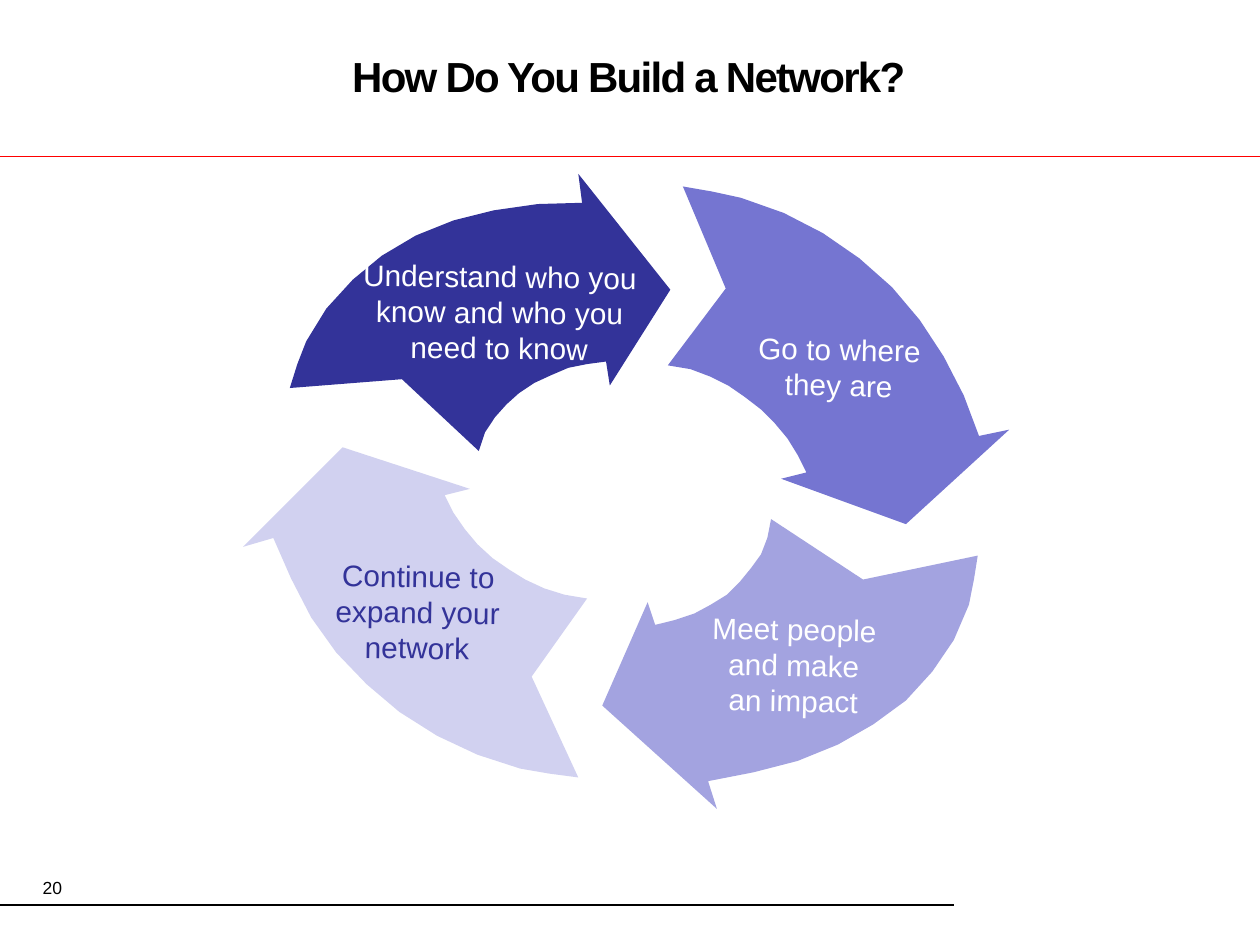
from lxml.etree import SubElement
from pptx import Presentation
from pptx.dml.color import RGBColor
from pptx.enum.shapes import MSO_CONNECTOR as Connector
from pptx.enum.text import MSO_ANCHOR as Anchor, PP_ALIGN as Align
from pptx.oxml.ns import qn
from pptx.util import Inches, Pt

COLUMNS, ROWS = 1000, 750
UNIT = Inches(10) // COLUMNS

BLACK = RGBColor(0x00, 0x00, 0x00)
WHITE = RGBColor(0xFF, 0xFF, 0xFF)
RED = RGBColor(0xFF, 0x00, 0x00)
NAVY = RGBColor(0x33, 0x33, 0x99)
INDIGO = RGBColor(0x75, 0x75, 0xD1)
LAVENDER = RGBColor(0xA3, 0xA3, 0xE0)
PALE = RGBColor(0xD1, 0xD1, 0xF0)

UNDERSTAND_ARROW = [
    (484, 306), (532, 230), (459, 138), (462, 161), (427, 162), (392, 167),
    (360, 175), (330, 187), (303, 203), (280, 222), (259, 245), (243, 271),
    (236, 289), (230, 308), (319, 301), (380, 358), (385, 343), (393, 331),
    (402, 321), (412, 312), (424, 304), (437, 298), (451, 292), (466, 289),
    (481, 287)]
GO_ARROW = [
    (620, 380), (719, 416), (801, 341), (777, 346), (765, 314), (749, 283),
    (730, 254), (708, 228), (682, 205), (653, 185), (622, 169), (588, 157),
    (565, 152), (542, 148), (576, 229), (530, 290), (548, 293), (564, 299),
    (578, 306), (591, 315), (604, 325), (615, 336), (625, 348), (633, 361),
    (640, 375)]
MEET_ARROW = [
    (514, 478), (478, 560), (569, 642), (562, 620), (598, 613), (633, 604),
    (665, 591), (693, 575), (719, 556), (740, 533), (757, 508), (769, 480),
    (773, 460), (776, 441), (685, 460), (612, 412), (609, 427), (604, 440),
    (596, 451), (587, 462), (577, 472), (564, 480), (551, 487), (536, 492),
    (520, 496)]
EXPAND_ARROW = [
    (373, 388), (272, 355), (193, 434), (217, 427), (231, 459), (247, 490),
    (267, 518), (291, 543), (317, 565), (347, 584), (379, 599), (413, 610),
    (436, 614), (459, 617), (422, 537), (466, 475), (448, 472), (432, 467),
    (417, 460), (404, 452), (391, 443), (379, 432), (369, 420), (360, 407),
    (353, 393)]

STEPS = [
    (UNDERSTAND_ARROW, NAVY, WHITE, (276, 200, 241, 96), 0.6,
     ["Understand who you know and who you need to know"]),
    (GO_ARROW, INDIGO, WHITE, (549, 258, 234, 67), 1.3,
     ["Go to where", "they are"]),
    (MEET_ARROW, LAVENDER, WHITE, (469, 480, 322, 96), 1.1,
     ["Meet people", "and make", "an impact"]),
    (EXPAND_ARROW, PALE, NAVY, (188, 438, 287, 96), 1,
     ["Continue to", "expand your", "network"]),
]


def grid(*cells):
    return [cell * UNIT for cell in cells]


def apply(target, formats):
    for name, value in formats.items():
        setattr(target, name, value)


def add_rule(slide, start, end, row, color, weight):
    rule = slide.shapes.add_connector(
        Connector.STRAIGHT, *grid(start, row, end, row))
    rule.line.color.rgb = color
    rule.line.width = Pt(weight)
    SubElement(rule._element.spPr, qn("a:effectLst"))


def add_arrow(slide, outline, color):
    builder = slide.shapes.build_freeform(*outline[0], scale=UNIT)
    builder.add_line_segments(outline[1:], close=True)
    arrow = builder.convert_to_shape()
    arrow.shadow.inherit = False
    arrow.fill.solid()
    arrow.fill.fore_color.rgb = color
    arrow.line.fill.background()


def add_text(slide, cells, lines, size, color, align=Align.CENTER,
             rotation=0, bold=False, frame=None):
    box = slide.shapes.add_textbox(*grid(*cells))
    box.rotation = rotation
    apply(box.text_frame, {"word_wrap": True, **(frame or {})})
    box.text_frame.text = "\n".join(lines)
    for paragraph in box.text_frame.paragraphs:
        paragraph.alignment = align
        font = paragraph.runs[0].font
        apply(font, {"name": "Arial", "size": Pt(size), "bold": bold})
        font.color.rgb = color
    return box


def add_title(slide, words):
    title = add_text(
        slide, (49, 0, 900, 83), [words], 24, BLACK, bold=True,
        frame={"vertical_anchor": Anchor.BOTTOM,
               "margin_bottom": Inches(0.03)})
    heading = title.text_frame.paragraphs[0]
    heading.line_spacing = Pt(26)
    heading.runs[0].font._element.set("spc", "-100")


def main():
    deck = Presentation()
    apply(deck, {"slide_width": COLUMNS * UNIT, "slide_height": ROWS * UNIT})
    slide = deck.slides.add_slide(deck.slide_layouts[6])

    add_rule(slide, -2, 757, 718, BLACK, 1)
    add_rule(slide, 0, COLUMNS, 124, RED, 0.75)
    for outline, fill, *_ in STEPS:
        add_arrow(slide, outline, fill)
    for _, _, ink, cells, tilt, lines in STEPS:
        add_text(slide, cells, lines, 17, ink, rotation=tilt)
    add_title(slide, "How Do You Build a Network?")
    add_text(slide, (0, 691, 59, 27), ["20"], 10, BLACK, Align.RIGHT)

    deck.save("out.pptx")


if __name__ == "__main__":
    main()
